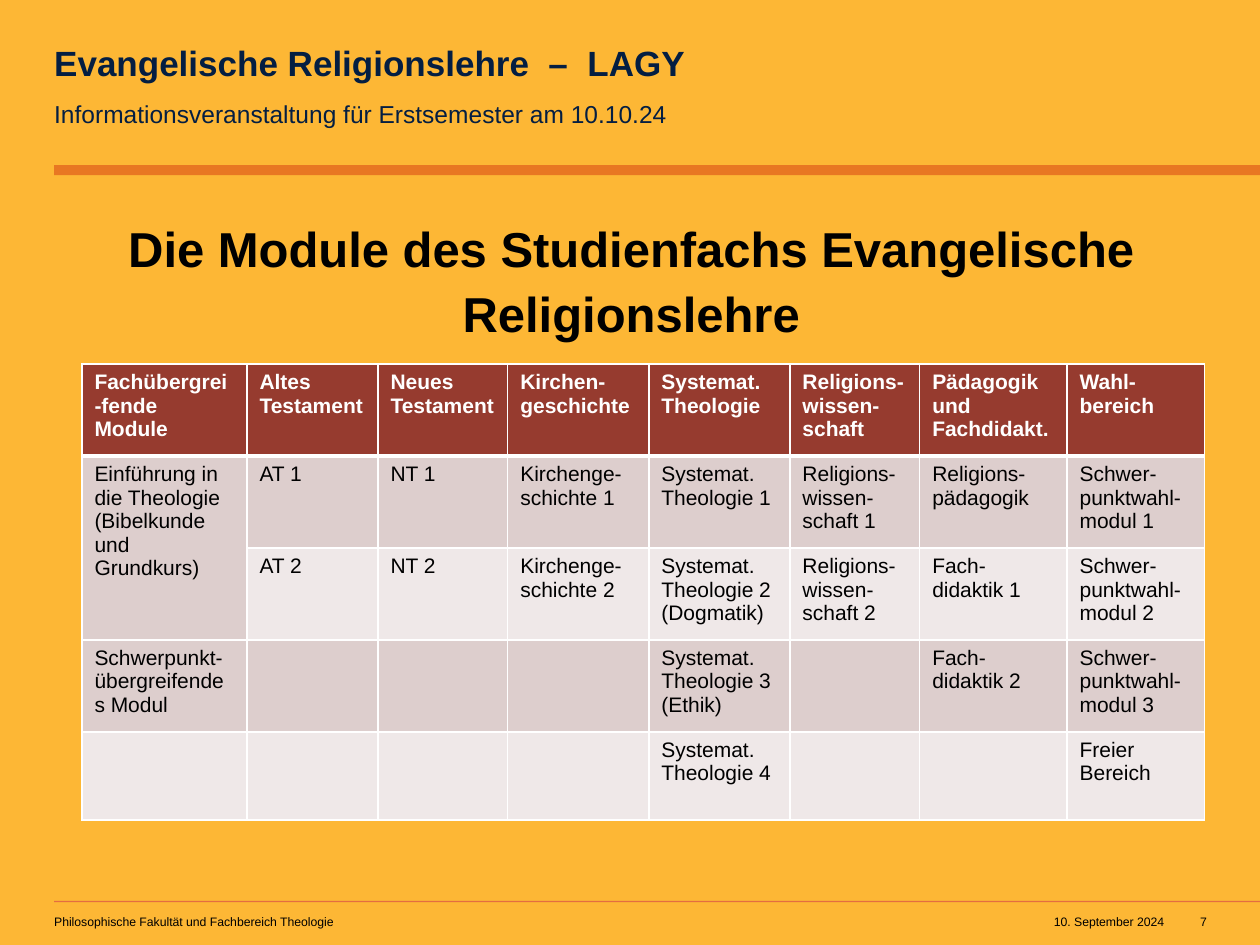
import pptx
import pptx.dml.color
import pptx.enum.shapes
import pptx.enum.text
import pptx.oxml
import pptx.util
from pptx.util import Inches

RGBColor = pptx.dml.color.RGBColor
ALIGN = pptx.enum.text.PP_ALIGN
YELLOW = RGBColor(0xFD, 0xB7, 0x35)
ORANGE = RGBColor(0xE8, 0x77, 0x22)
RUST = RGBColor(0xE4, 0x6D, 0x41)
NAVY = RGBColor(0x04, 0x1E, 0x42)
BLACK = RGBColor(0x00, 0x00, 0x00)
WHITE = RGBColor(0xFF, 0xFF, 0xFF)
HEADER_RED = RGBColor(0x96, 0x3B, 0x2F)
BAND_DARK = RGBColor(0xDD, 0xCE, 0xCD)
BAND_LIGHT = RGBColor(0xEF, 0xE8, 0xE8)
NAMESPACE = "http://schemas.openxmlformats.org/drawingml/2006/main"


def format_text(shape, text, size, color, bold=False, align=ALIGN.LEFT, wrap=True):
    frame = shape.text_frame
    frame.margin_left = frame.margin_right = frame.margin_top = frame.margin_bottom = 0
    frame.vertical_anchor = pptx.enum.text.MSO_ANCHOR.TOP
    frame.auto_size = pptx.enum.text.MSO_AUTO_SIZE.NONE
    frame.word_wrap = wrap
    frame.text = text
    paragraph = frame.paragraphs[0]
    paragraph.alignment = align
    paragraph.font.name = "Arial"
    paragraph.font.size = pptx.util.Pt(size)
    paragraph.font.bold = bold
    paragraph.font.color.rgb = color
    return paragraph


def set_borders(cell, widths):
    properties = cell._tc.get_or_add_tcPr()
    for index, (side, width) in enumerate(widths.items()):
        line = pptx.oxml.parse_xml(
            f'<a:{side} xmlns:a="{NAMESPACE}" w="{pptx.util.Pt(width)}">'
            f'<a:solidFill><a:srgbClr val="{WHITE}"/></a:solidFill></a:{side}>')
        properties.insert(index, line)


presentation = pptx.Presentation()
presentation.slide_width = Inches(10)
presentation.slide_height = Inches(7.5)
slide = presentation.slides.add_slide(presentation.slide_layouts[5])
slide.background.fill.solid()
slide.background.fill.fore_color.rgb = YELLOW

for left, top, width, height, color in [
    (0.43, 7.15, 9.57, 0.01, RUST),
    (0.43, 1.31, 9.57, 0.08, ORANGE),
]:
    bar = slide.shapes.add_shape(
        pptx.enum.shapes.MSO_SHAPE.RECTANGLE,
        Inches(left), Inches(top), Inches(width), Inches(height))
    bar.shadow.inherit = False
    bar.fill.solid()
    bar.fill.fore_color.rgb = color
    bar.line.fill.background()

title = slide.shapes.title
title.left, title.top = Inches(0.43), Inches(0.33)
title.width, title.height = Inches(5.61), Inches(0.67)
format_text(title, "Evangelische Religionslehre\u00a0 –\u00a0 LAGY".replace("\u00a0", " "), 20, NAVY, bold=True)

for left, width, text, align, wrap in [
    (8.53, 0.71, "10. September 2024", ALIGN.RIGHT, False),
    (0.43, 4.49, "Philosophische Fakultät und Fachbereich Theologie", ALIGN.LEFT, True),
    (9.38, 0.2, "7", ALIGN.RIGHT, False),
]:
    footer = slide.shapes.add_textbox(Inches(left), Inches(7.26), Inches(width), Inches(0.12))
    format_text(footer, text, 7, BLACK, align=align, wrap=wrap)

subtitle = slide.shapes.add_textbox(Inches(0.43), Inches(0.67), Inches(5.61), Inches(0.35))
paragraph = format_text(
    subtitle, "Informationsveranstaltung für Erstsemester am 10.10.24", 14, NAVY)
paragraph.line_spacing = 1.5

heading = slide.shapes.add_textbox(Inches(0.46), Inches(1.69), Inches(9.1), Inches(1.78))
paragraph = format_text(
    heading, "Die Module des Studienfachs Evangelische Religionslehre", 28, BLACK,
    bold=True, align=ALIGN.CENTER)
paragraph.line_spacing = 1.1

module_rows = [
    ["Fachübergrei-fende Module", "Altes Testament", "Neues Testament", "Kirchen-geschichte",
     "Systemat.\nTheologie", "Religions-wissen-schaft", "Pädagogik und Fachdidakt.",
     "Wahl-bereich"],
    ["Einführung in die Theologie\n(Bibelkunde und Grundkurs)", "AT 1", "NT 1",
     "Kirchenge-schichte 1", "Systemat. Theologie 1", "Religions-wissen-schaft 1",
     "Religions-pädagogik", "Schwer-punktwahl-modul 1"],
    ["", "AT 2", "NT 2", "Kirchenge-schichte 2", "Systemat. Theologie 2 (Dogmatik)",
     "Religions-wissen-schaft 2", "Fach-didaktik 1", "Schwer-punktwahl-modul 2"],
    ["Schwerpunkt-übergreifendes Modul", "", "", "", "Systemat. Theologie 3 (Ethik)", "",
     "Fach-didaktik 2", "Schwer-punktwahl-modul 3"],
    ["", "", "", "", "Systemat. Theologie 4", "", "", "Freier Bereich"],
]
column_widths = [1.31, 1.04, 1.03, 1.12, 1.12, 1.03, 1.17, 1.09]
row_heights = [0.73, 0.73, 0.73, 0.73, 0.7]
table = slide.shapes.add_table(
    len(row_heights), len(column_widths), Inches(0.65), Inches(2.89),
    Inches(sum(column_widths)), Inches(sum(row_heights))).table
for column, width in zip(table.columns, column_widths):
    column.width = Inches(width)
for row, height in zip(table.rows, row_heights):
    row.height = Inches(height)

for row_index, texts in enumerate(module_rows):
    is_header = row_index == 0
    band = HEADER_RED if is_header else BAND_DARK if row_index % 2 else BAND_LIGHT
    for column_index, text in enumerate(texts):
        cell = table.cell(row_index, column_index)
        cell.text = text
        cell.fill.solid()
        cell.fill.fore_color.rgb = band
        set_borders(cell, {"lnL": 1, "lnR": 1, "lnT": 3 if row_index == 1 else 1,
                           "lnB": 3 if is_header else 1})
        for paragraph in cell.text_frame.paragraphs:
            paragraph.font.name = "Arial"
            paragraph.font.size = pptx.util.Pt(12)
            paragraph.font.bold = is_header
            paragraph.font.color.rgb = WHITE if is_header else BLACK
table.cell(1, 0).merge(table.cell(2, 0))

presentation.save("out.pptx")
